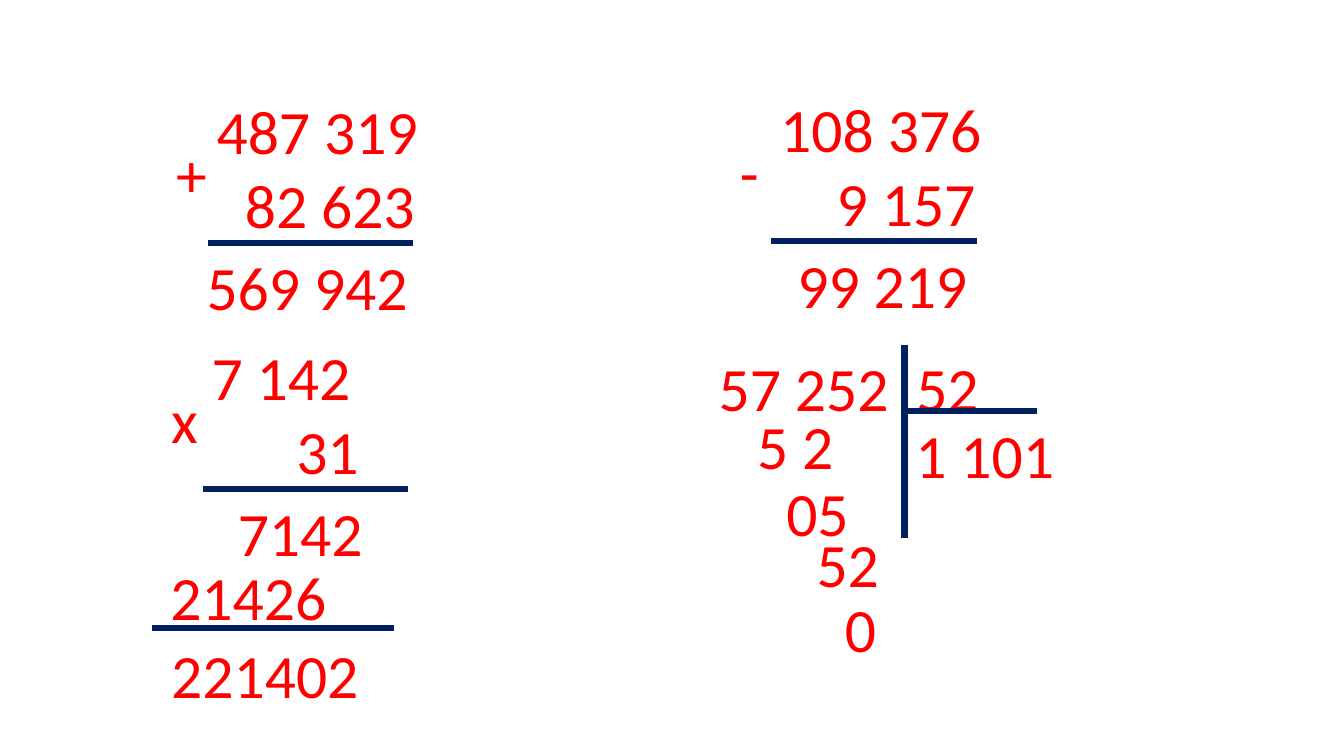
"""Build a slide of written addition, subtraction, multiplication and division."""
import dataclasses

import lxml.etree
import pptx
import pptx.dml.color
import pptx.enum.shapes
import pptx.enum.text
import pptx.oxml.ns
import pptx.util

EMU_PER_PX = 9144
SPACE = 14


@dataclasses.dataclass(frozen=True)
class Theme:
    """Colours, font and sizes of the slide."""
    digits: str = "FF0000"
    rule: str = "002060"
    font: str = "Calibri"
    size: int = 44
    rule_width: float = 4.5


def px(length):
    """Turn px into EMU."""
    return pptx.util.Emu(length * EMU_PER_PX)


def write(paragraph, text, *, theme, indent=0, tab=None):
    """Write one styled line with an optional indent and tab stop."""
    properties = paragraph._p.get_or_add_pPr()
    if indent:
        properties.set("marL", str(px(indent)))
    if tab:
        stops = lxml.etree.SubElement(properties, pptx.oxml.ns.qn("a:tabLst"))
        lxml.etree.SubElement(stops, pptx.oxml.ns.qn("a:tab"), pos=str(px(tab)), algn="l")
    run = paragraph.add_run()
    run.text = text
    run.font.name = theme.font
    run.font.size = pptx.util.Pt(theme.size)
    run.font.color.rgb = pptx.dml.color.RGBColor.from_string(theme.digits)


class Worksheet:
    """The current slide and its style."""

    def __init__(self, slide, theme):
        """Keep the slide and theme."""
        self.slide = slide
        self.theme = theme

    def number(self, left, top, *lines, width=302, tab=None):
        """Add a text box of (text, indent) lines."""
        height = 84 + 74 * (len(lines) - 1)
        box = self.slide.shapes.add_textbox(px(left), px(top), px(width), px(height))
        frame = box.text_frame
        frame.word_wrap = True
        frame.auto_size = pptx.enum.text.MSO_AUTO_SIZE.SHAPE_TO_FIT_TEXT
        for index, (text, indent) in enumerate(lines):
            paragraph = frame.add_paragraph() if index else frame.paragraphs[0]
            write(paragraph, text, theme=self.theme, indent=indent, tab=tab)

    def rule(self, x1, y1, x2, y2):
        """Draw a thick straight rule."""
        line = self.slide.shapes.add_connector(
            pptx.enum.shapes.MSO_CONNECTOR.STRAIGHT, px(x1), px(y1), px(x2), px(y2))
        line.line.color.rgb = pptx.dml.color.RGBColor.from_string(self.theme.rule)
        line.line.width = pptx.util.Pt(self.theme.rule_width)
        lxml.etree.SubElement(line._element.spPr, pptx.oxml.ns.qn("a:effectLst"))

    def operation(self, left, top, sign, upper, lower, spaces, result, result_left):
        """Set out two operands, their sign, the rule and the first result."""
        self.number(left, top, (upper, 0), (lower, spaces * SPACE))
        self.number(left - 40, top + 43, (sign, 0), width=63)
        self.rule(left + 1, top + 154, left + 205, top + 154)
        self.number(result_left, top + 155, (result, 0))


def main():
    """Create and save the slide."""
    deck = pptx.Presentation()
    deck.slide_width, deck.slide_height = px(1333), px(750)
    sheet = Worksheet(deck.slides.add_slide(deck.slide_layouts[6]), Theme())

    sheet.operation(205, 87, "+", "487 319", "82 623", 2, "569 942", 195)
    sheet.operation(764, 85, "-", "108 376", "9 157", 4, "99 219", 781)
    sheet.operation(200, 331, "x", "7 142", "31", 6, "7142", 226)

    sheet.number(159, 550, ("21426", 0))
    sheet.rule(151, 623, 391, 623)
    sheet.number(160, 627, ("221402", 0))

    sheet.number(703, 342, ("57 252\t52", 0), tab=196)
    sheet.rule(897, 534, 897, 342)
    sheet.rule(1029, 408, 897, 408)
    sheet.number(898, 409, ("1 101", 0))
    remainders = [(741, 400, "5 2"), (770, 466, "05"), (800, 517, "52"), (828, 581, "0")]
    for left, top, remainder in remainders:
        sheet.number(left, top, (remainder, 0), width=179)

    deck.save("out.pptx")


if __name__ == "__main__":
    main()
